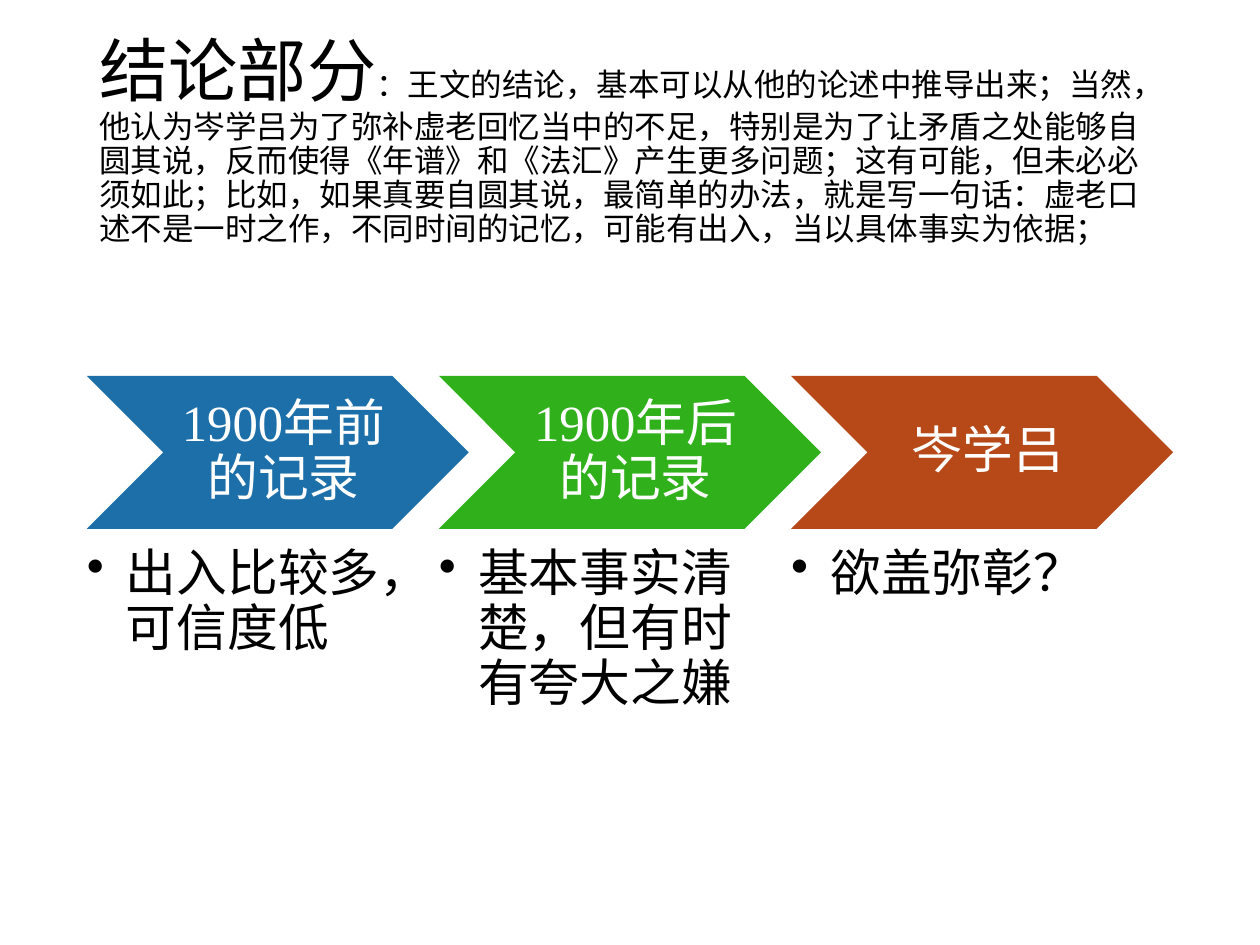
from lxml.etree import SubElement
from pptx import Presentation
from pptx.dml.color import RGBColor
from pptx.enum.shapes import MSO_SHAPE
from pptx.enum.text import MSO_ANCHOR, PP_ALIGN
from pptx.oxml.ns import qn
from pptx.util import Cm, Pt

FONT = "Times New Roman"
BLACK, WHITE = "000000", "FFFFFF"
TITLE_RUNS = [
    ("结论部分", 39.6),
    ("：王文的结论，基本可以从他的论述中推导出来；当然，他认为岑学吕为了弥补虚老回忆当中的不足，"
     "特别是为了让矛盾之处能够自圆其说，反而使得《年谱》和《法汇》产生更多问题；这有可能，但未必必须如此；"
     "比如，如果真要自圆其说，最简单的办法，就是写一句话：虚老口述不是一时之作，不同时间的记忆，"
     "可能有出入，当以具体事实为依据；", 18),
]
STAGES = [
    ("1900年前的记录", "出入比较多，可信度低", "1D6FA9"),
    ("1900年后的记录", "基本事实清楚，但有时有夸大之嫌", "30B01B"),
    ("岑学吕", "欲盖弥彰？", "B74919"),
]
STAGE_SIZE = 29
LEFT, PITCH = 1.75, 7.1
CHEVRON_TOP, CHEVRON_WIDTH, CHEVRON_HEIGHT = 7.58, 7.7, 3.08
NOTE_TOP, NOTE_WIDTH, NOTE_HEIGHT = 11.05, 6.17, 3.6
BULLET_INDENT = 0.79


def color(value):
    return RGBColor.from_string(value)


def set_frame(shape, anchor, insets):
    """Wrap the text and set insets in cm: left, top, right, bottom."""
    frame = shape.text_frame
    frame.word_wrap = True
    frame.vertical_anchor = anchor
    (frame.margin_left, frame.margin_top,
     frame.margin_right, frame.margin_bottom) = map(Cm, insets)
    return frame.paragraphs[0]


def add_runs(paragraph, runs, font_color):
    paragraph.line_spacing = 0.9
    for text, size in runs:
        run = paragraph.add_run()
        run.text = text
        run.font.name = FONT
        run.font.size = Pt(size)
        run.font.color.rgb = color(font_color)


def add_bullet(paragraph):
    properties = paragraph._p.get_or_add_pPr()
    properties.set("marL", str(Cm(BULLET_INDENT)))
    properties.set("indent", str(-Cm(BULLET_INDENT)))
    SubElement(properties, qn("a:buChar")).set("char", "•")


def add_stage(slide, left, heading, note, fill):
    chevron = slide.shapes.add_shape(
        MSO_SHAPE.CHEVRON, Cm(left), Cm(CHEVRON_TOP), Cm(CHEVRON_WIDTH), Cm(CHEVRON_HEIGHT))
    chevron.shadow.inherit = False
    chevron.fill.solid()
    chevron.fill.fore_color.rgb = color(fill)
    chevron.line.fill.background()
    paragraph = set_frame(chevron, MSO_ANCHOR.MIDDLE, (0.33, 0.1, 0.1, 0.1))
    paragraph.alignment = PP_ALIGN.CENTER
    add_runs(paragraph, [(heading, STAGE_SIZE)], WHITE)

    note_box = slide.shapes.add_textbox(
        Cm(left), Cm(NOTE_TOP), Cm(NOTE_WIDTH), Cm(NOTE_HEIGHT))
    paragraph = set_frame(note_box, MSO_ANCHOR.TOP, (0, 0, 0, 0))
    add_bullet(paragraph)
    add_runs(paragraph, [(note, STAGE_SIZE)], BLACK)


def main():
    presentation = Presentation()
    presentation.slide_width, presentation.slide_height = Cm(25.4), Cm(19.05)
    slide = presentation.slides.add_slide(presentation.slide_layouts[6])

    title = slide.shapes.add_textbox(Cm(LEFT), Cm(1.02), Cm(21.9), Cm(3.68))
    paragraph = set_frame(title, MSO_ANCHOR.MIDDLE, (0.25, 0.13, 0.25, 0.13))
    add_runs(paragraph, TITLE_RUNS, BLACK)

    for index, stage in enumerate(STAGES):
        add_stage(slide, LEFT + index * PITCH, *stage)
    presentation.save("out.pptx")


if __name__ == "__main__":
    main()
